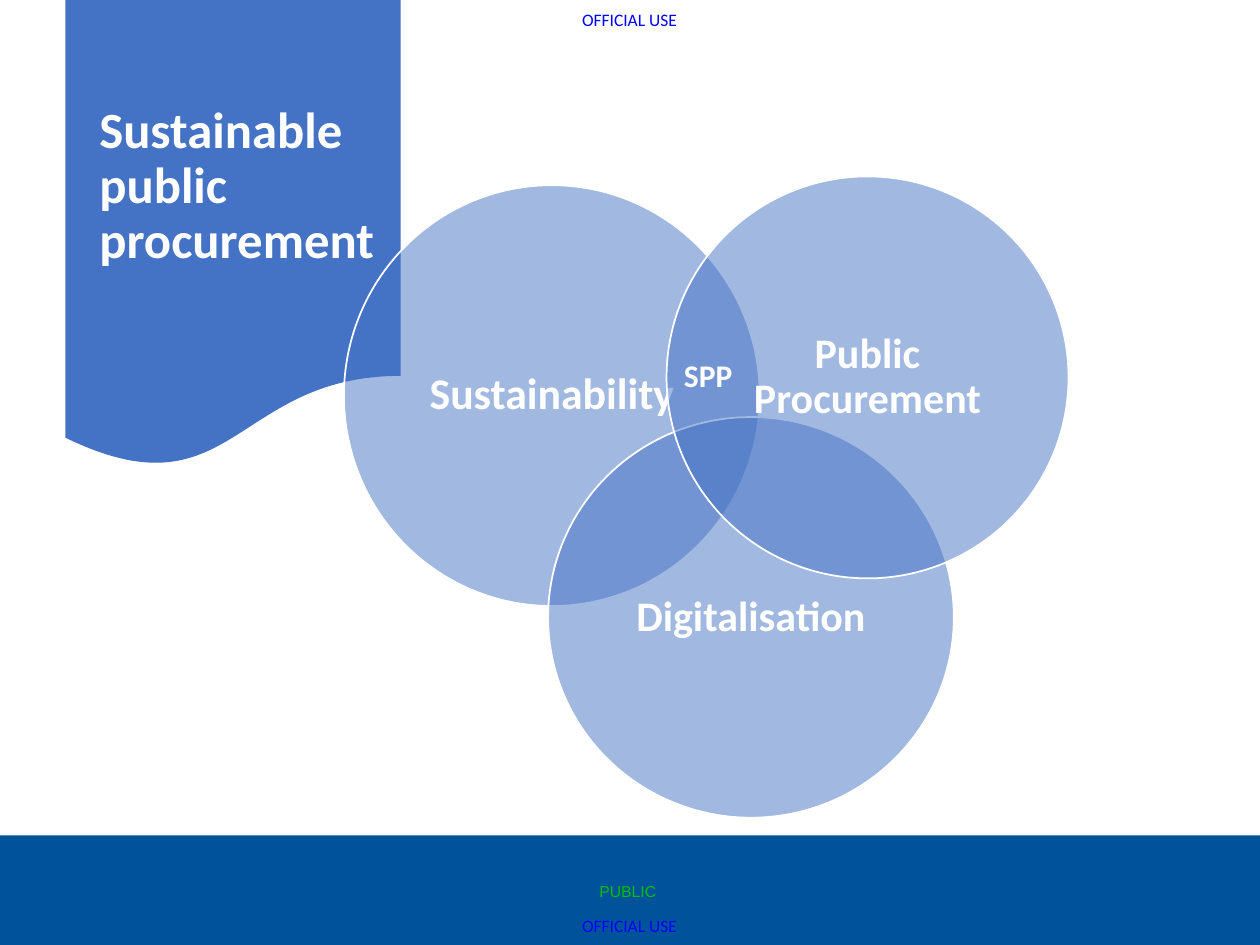
from dataclasses import dataclass
from math import sqrt

from lxml import etree
from pptx import Presentation
from pptx.dml.color import RGBColor
from pptx.enum.shapes import MSO_SHAPE as Shape
from pptx.enum.text import MSO_ANCHOR as Anchor, PP_ALIGN as Align
from pptx.oxml.ns import qn
from pptx.util import Inches, Pt


@dataclass(frozen=True)
class Theme:
    font: str = "Calibri"
    public_font: str = "Arial"
    white: str = "FFFFFF"
    blue: str = "4472C4"
    footer: str = "00539B"
    official: str = "0000FF"
    public: str = "00C000"
    title_size: int = 29
    large_size: int = 25
    label_size: int = 24
    overlap_size: int = 18
    official_size: int = 10
    public_size: int = 9


THEME = Theme()

# Label, type size, and left, top, width, height in inches, back to front
CIRCLES = [
    ("Sustainability", THEME.large_size, (2.73, 1.47, 3.3, 3.34)),
    ("Digitalisation", THEME.label_size, (4.35, 3.31, 3.22, 3.18)),
    ("Public Procurement", THEME.label_size, (5.29, 1.4, 3.19, 3.19)),
]


def add_text(slide, text, box, size, color=THEME.white, font=THEME.font, bold=False,
             align=Align.LEFT, anchor=Anchor.TOP, line_spacing=1.0,
             margins=(0.1, 0.05)):
    frame = slide.shapes.add_textbox(*map(Inches, box)).text_frame
    frame.word_wrap = True
    frame.vertical_anchor = anchor
    frame.margin_left = frame.margin_right = Inches(margins[0])
    frame.margin_top = frame.margin_bottom = Inches(margins[1])
    paragraph = frame.paragraphs[0]
    paragraph.text = text
    paragraph.alignment = align
    paragraph.line_spacing = line_spacing
    paragraph.font.name = font
    paragraph.font.size = Pt(size)
    paragraph.font.bold = bold
    paragraph.font.color.rgb = RGBColor.from_string(color)


def add_filled(slide, preset, box, color):
    shape = slide.shapes.add_shape(preset, *map(Inches, box))
    shape.shadow.inherit = False
    shape.fill.solid()
    shape.fill.fore_color.rgb = RGBColor.from_string(color)
    shape.line.fill.background()
    return shape


def add_circle(slide, label, size, box):
    circle = add_filled(slide, Shape.OVAL, box, THEME.blue)
    circle.line.color.rgb = RGBColor.from_string(THEME.white)
    circle.line.width = Pt(1)
    # Half-transparent fill
    fill_color = circle.fill._xPr.find(qn("a:solidFill"))[0]
    etree.SubElement(fill_color, qn("a:alpha")).set("val", "50000")

    # The label fills the rectangle inscribed in the circle
    left, top, width, height = box
    inset = (1 - 1 / sqrt(2)) / 2
    label_box = (left + width * inset, top + height * inset,
                 width / sqrt(2), height / sqrt(2))
    add_text(slide, label, label_box, size, bold=True, align=Align.CENTER,
             anchor=Anchor.MIDDLE, line_spacing=0.9, margins=(0.1, 0.1))


def main():
    deck = Presentation()
    deck.slide_width, deck.slide_height = Inches(10), Inches(7.5)
    slide = deck.slides.add_slide(deck.slide_layouts[6])

    # Footer band and classification marks
    add_filled(slide, Shape.RECTANGLE, (0, 6.63, 10.01, 0.87), THEME.footer)
    for top in (0.07, 7.26):
        add_text(slide, "OFFICIAL USE", (4.62, top, 0.79, 0.17),
                 THEME.official_size, THEME.official, margins=(0, 0))

    # Title banner
    add_filled(slide, Shape.FLOWCHART_DOCUMENT, (0.52, 0, 2.66, 3.72), THEME.blue)
    add_text(slide, "Sustainable public procurement", (0.69, 0.19, 2.5, 2.59),
             THEME.title_size, bold=True, anchor=Anchor.MIDDLE, line_spacing=0.9)

    # Overlapping circles and the name of their overlap
    for label, size, box in CIRCLES:
        add_circle(slide, label, size, box)
    add_text(slide, "SPP", (5.33, 2.78, 0.62, 0.4), THEME.overlap_size, bold=True)

    # Public mark
    add_text(slide, "PUBLIC ", (0, 6.95, 10, 0.4), THEME.public_size,
             THEME.public, THEME.public_font, align=Align.CENTER)

    deck.save("out.pptx")


if __name__ == "__main__":
    main()
